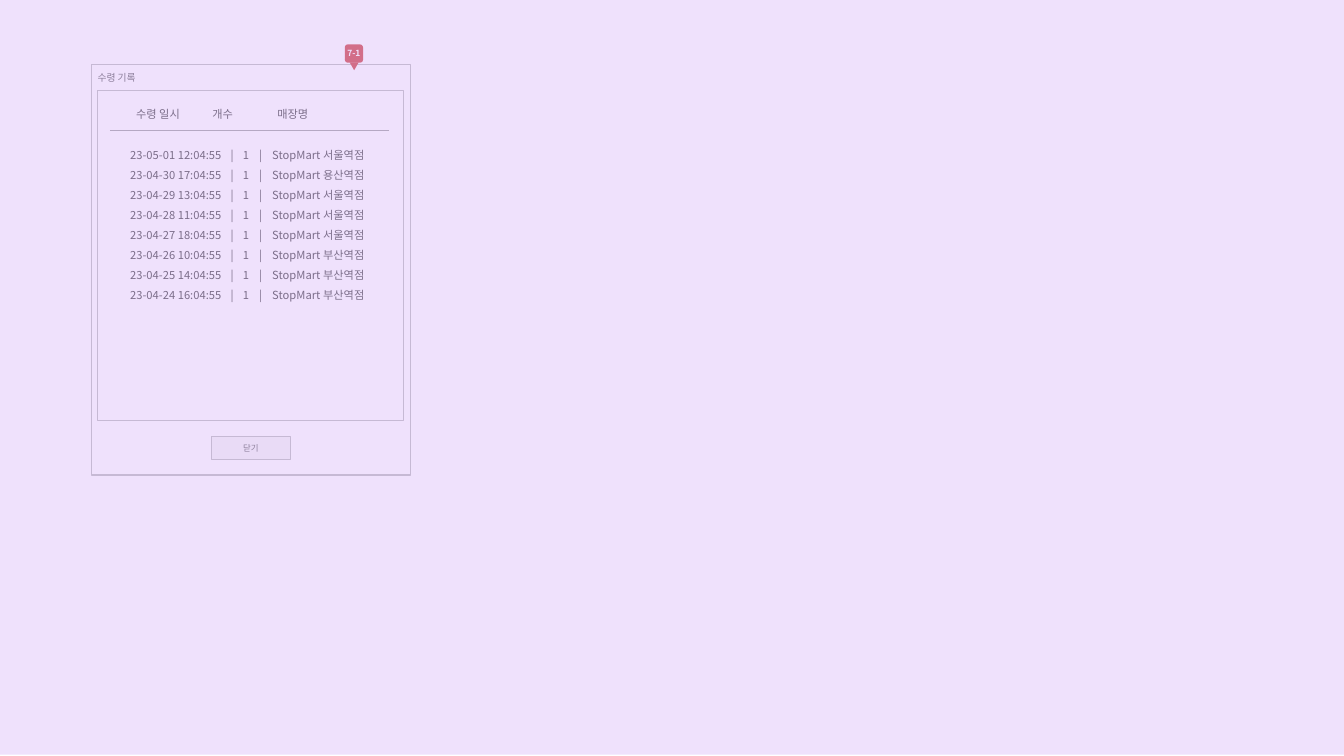
from lxml.etree import SubElement as Sub
from pptx import Presentation
from pptx.dml.color import RGBColor as Rgb
from pptx.enum.shapes import MSO_CONNECTOR as Link, MSO_SHAPE as Kind
from pptx.enum.text import MSO_ANCHOR as Anchor, PP_ALIGN as Align
from pptx.oxml.ns import qn
from pptx.util import Cm, Pt

FONT = "Noto Sans CJK KR"
GREY, DARK, RED = "A6A6A6", "262626", "C00000"
LEAD = 1.19
SHOP = "StopMart"
VISITS = [
    ("23-05-01 12:04:55", "서울역점"),
    ("23-04-30 17:04:55", "용산역점"),
    ("23-04-29 13:04:55", "서울역점"),
    ("23-04-28 11:04:55", "서울역점"),
    ("23-04-27 18:04:55", "서울역점"),
    ("23-04-26 10:04:55", "부산역점"),
    ("23-04-25 14:04:55", "부산역점"),
    ("23-04-24 16:04:55", "부산역점"),
]


def paint(part, tint):
    """Set a fill or font colour from a hex string."""
    part.solid()
    part.fore_color.rgb = Rgb.from_string(tint)


def place(box, x, y, w, h):
    """Return a box in cm, moved to the corner of its parent."""
    return box[0] + x, box[1] + y, w, h


def block(shapes, kind, box, fill, line=None, width=1):
    """Add a flat preset shape."""
    shape = shapes.add_shape(kind, *map(Cm, box))
    shape.shadow.inherit = False
    paint(shape.fill, fill)
    if line:
        paint(shape.line.fill, line)
        shape.line.width = Pt(width)
    else:
        shape.line.fill.background()
    return shape


def write(frame, lines, size, tint, align=Align.LEFT, bold=False, lead=LEAD, tabs=()):
    """Fill a text frame with lines of one style."""
    for i, line in enumerate(lines):
        para = frame.add_paragraph() if i else frame.paragraphs[0]
        para.text = line
        para.alignment = align
        para.line_spacing = Pt(round(size * lead, 1))
        props = para._p.get_or_add_pPr()
        if tabs:
            stops = Sub(props, qn("a:tabLst"))
            for tab in tabs:
                Sub(stops, qn("a:tab"), pos=str(Cm(tab)), algn="l")
        font = para.font
        font.name, font.size, font.bold = FONT, Pt(size), bold
        paint(font.fill, tint)
        Sub(props.find(qn("a:defRPr")), qn("a:ea"), typeface=FONT)


def label(shapes, box, lines, size, tint, side=0.25, top=0.13, **style):
    """Add a wrapped text box."""
    frame = shapes.add_textbox(*map(Cm, box)).text_frame
    frame.word_wrap = True
    frame.margin_left = frame.margin_right = Cm(side)
    frame.margin_top = frame.margin_bottom = Cm(top)
    write(frame, lines, size, tint, **style)


def rule(shapes, box, x, y, span):
    """Draw the thin line below the column heads."""
    left, top = box[0] + x, box[1] + y
    line = shapes.add_connector(Link.STRAIGHT, Cm(left), Cm(top), Cm(left + span), Cm(top))
    paint(line.line.fill, "808080")
    line.line.width = Pt(0.5)
    Sub(line._element.spPr, qn("a:effectLst"))


def panel(shapes, box):
    """Draw the pickup history window."""
    block(shapes, Kind.RECTANGLE, box, "FFFFFF", GREY)
    block(shapes, Kind.RECTANGLE, place(box, 0.15, 0.66, 7.72, 8.31), "FFFFFF", GREY, 0.75)
    label(shapes, place(box, 0, 0.1, 2.13, 0.43), ["수령 기록"], 7, DARK, 0.15, 0.08)
    label(shapes, place(box, 0.41, 0.96, 7.65, 0.61), ["수령 일시\t개수\t매장명"],
          8, "000000", side=0.71, tabs=(1.92, 3.56))
    rule(shapes, box, 0.46, 1.65, 7.03)
    rows = [f"{time}\t|\t1\t|\t{SHOP} {shop}" for time, shop in VISITS]
    label(shapes, place(box, 0.23, 1.8, 7.49, 4.29), rows, 8, "000000",
          side=0.74, lead=1.5 * LEAD, tabs=(2.53, 2.84, 3.25, 3.58))
    button(shapes, place(box, 3.02, 9.37, 1.98, 0.58))


def button(shapes, box):
    """Draw the close button."""
    shape = block(shapes, Kind.ROUNDED_RECTANGLE, box, "F2F2F2", GREY, 0.5)
    shape.adjustments[0] = 0
    frame = shape.text_frame
    frame.word_wrap = False
    frame.vertical_anchor = Anchor.MIDDLE
    write(frame, ["닫기"], 6, DARK, Align.CENTER)


def badge(shapes, box):
    """Draw the numbered marker as one group."""
    group = shapes.add_group_shape().shapes
    tip = block(group, Kind.ISOSCELES_TRIANGLE, place(box, 0.22, 0.48, 0.23, 0.2), RED)
    tip.rotation = 180
    block(group, Kind.ROUNDED_RECTANGLE, place(box, 0.1, 0.03, 0.46, 0.46), RED)
    label(group, box, ["7-1"], 6, "FFFFFF", 0.13, 0.13, align=Align.CENTER, bold=True)


def veil(shapes, box):
    """Lay a see-through tint over the slide."""
    shape = block(shapes, Kind.RECTANGLE, box, "E2C9FB")
    tint = shape._element.spPr.find(qn("a:solidFill"))[0]
    Sub(tint, qn("a:alpha"), val="55000")


def main():
    """Build and save the slide."""
    deck = Presentation()
    deck.slide_width, deck.slide_height = Cm(33.87), Cm(19.05)
    shapes = deck.slides.add_slide(deck.slide_layouts[6]).shapes
    panel(shapes, (2.31, 1.63, 8.03, 10.34))
    badge(shapes, (8.59, 1.09, 0.66, 0.53))
    veil(shapes, (0, 0, 33.87, 19.02))
    deck.save("out.pptx")


if __name__ == "__main__":
    main()
